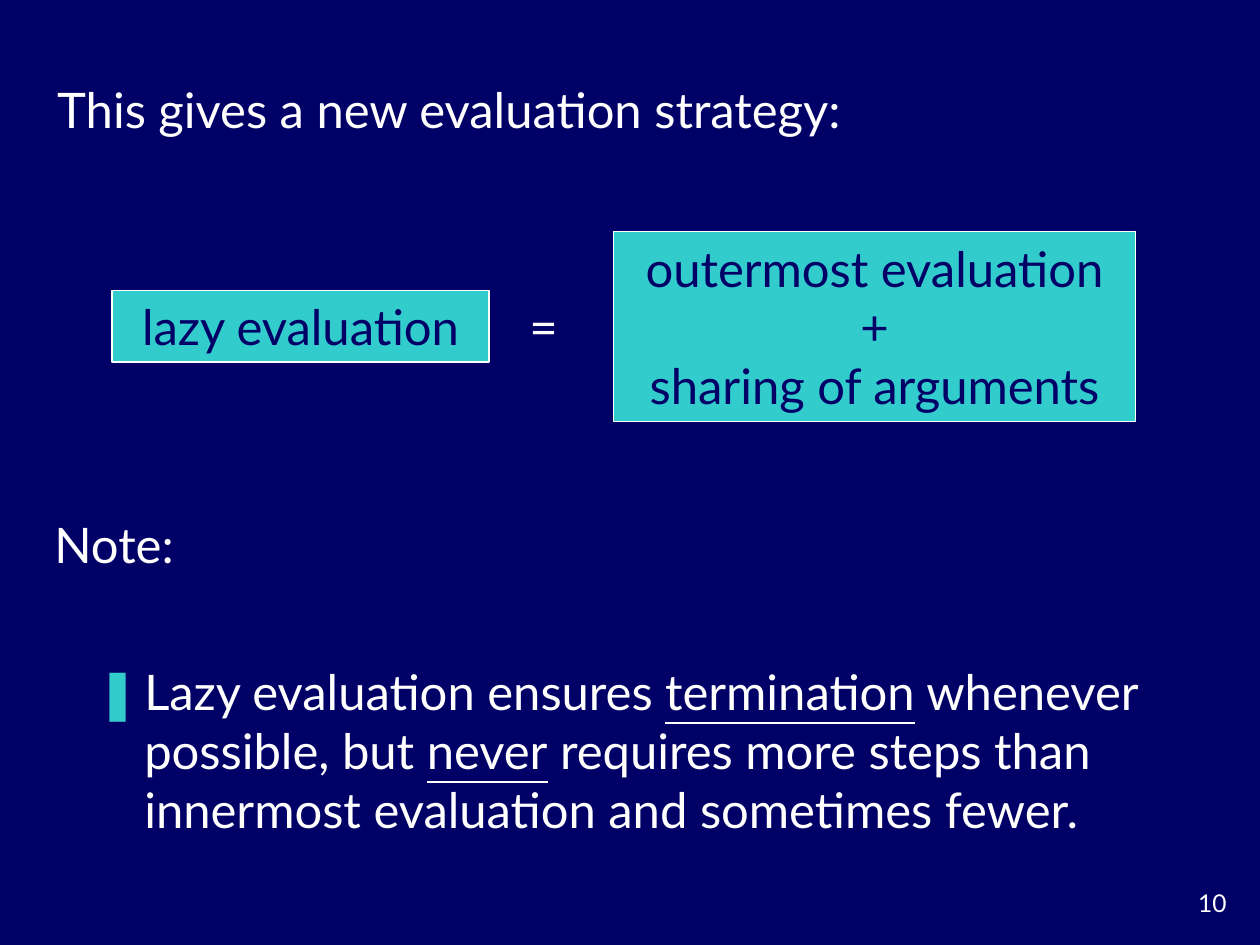
from lxml import etree
from pptx import Presentation
from pptx.dml.color import RGBColor
from pptx.enum.shapes import MSO_SHAPE
from pptx.enum.text import MSO_ANCHOR as Anchor, MSO_AUTO_SIZE as AutoSize, PP_ALIGN as Align
from pptx.oxml.ns import qn
from pptx.util import Pt

NAVY, TEAL, WHITE = "000066", "33CCCC", "FFFFFF"
FONT = "Lato"
LINE_HEIGHT = 41


def color(hex_string):
    return RGBColor.from_string(hex_string)


def place(shape, left, top, width, height):
    shape.left, shape.top = Pt(left), Pt(top)
    shape.width, shape.height = Pt(width), Pt(height)


def write(shape, *paragraphs, size=28, fill=WHITE, align=Align.LEFT, anchor=Anchor.MIDDLE):
    """Each paragraph is a list of (text, underlined) runs or a plain string; "\\n" breaks a line."""
    frame = shape.text_frame
    frame.word_wrap = True
    frame.auto_size = AutoSize.NONE
    frame.vertical_anchor = anchor
    for index, runs in enumerate(paragraphs):
        paragraph = frame.add_paragraph() if index else frame.paragraphs[0]
        paragraph.alignment = align
        paragraph.space_before = Pt(0)
        for text, underlined in [(runs, False)] if isinstance(runs, str) else runs:
            for line_index, line in enumerate(text.split("\n")):
                if line_index:
                    paragraph.add_line_break()
                run = paragraph.add_run()
                run.text = line
                run.font.name, run.font.size = FONT, Pt(size)
                run.font.color.rgb = color(fill)
                if underlined:
                    run.font.underline = True


def add_label(slide, text, left, top, width, height=LINE_HEIGHT, **text_format):
    label = slide.shapes.add_textbox(Pt(left), Pt(top), Pt(width), Pt(height))
    write(label, text, **text_format)


def add_term_box(slide, left, middle, width, height, *paragraphs):
    box = slide.shapes.add_shape(
        MSO_SHAPE.RECTANGLE, Pt(left), Pt(middle - height / 2), Pt(width), Pt(height))
    box.shadow.inherit = False
    box.fill.solid()
    box.fill.fore_color.rgb = color(TEAL)
    box.line.color.rgb = color(WHITE)
    box.line.width = Pt(0.75)
    write(box, *paragraphs, fill=NAVY, align=Align.CENTER)


def add_bullet(paragraph, character, hex_string, indent):
    properties = paragraph._p.get_or_add_pPr()
    properties.set("marL", str(Pt(indent)))
    properties.set("indent", str(-Pt(indent)))
    bullet_color = etree.SubElement(properties, qn("a:buClr"))
    etree.SubElement(bullet_color, qn("a:srgbClr"), val=hex_string)
    etree.SubElement(properties, qn("a:buFont"), typeface=FONT)
    etree.SubElement(properties, qn("a:buChar"), char=character)


def add_equation(slide, left, top, height):
    middle = top + height / 2
    add_term_box(slide, left, middle, 215.5, LINE_HEIGHT, "lazy evaluation")
    add_label(slide, "=", left + 231.5, middle - LINE_HEIGHT / 2, 45)
    add_term_box(slide, left + 286.5, middle, 298.5, height,
                 "outermost evaluation\n+", "sharing of arguments")


def fill_title(slide, left, top, width):
    title = slide.shapes.title
    place(title, left, top, width, LINE_HEIGHT)
    write(title, "This gives a new evaluation strategy:")


def fill_note(slide, left, top, width, height):
    body = slide.placeholders[1]
    place(body, left, top, width, height)
    write(body, [
        ("Lazy evaluation ensures ", False),
        ("termination", True),
        (" whenever possible, but ", False),
        ("never", True),
        (" requires more steps than innermost evaluation and sometimes fewer.", False),
    ], anchor=Anchor.TOP)
    add_bullet(body.text_frame.paragraphs[0], "❚", TEAL, 27)


def main():
    presentation = Presentation()
    presentation.slide_width, presentation.slide_height = Pt(720), Pt(540)
    slide = presentation.slides.add_slide(presentation.slide_layouts[1])
    slide.background.fill.solid()
    slide.background.fill.fore_color.rgb = color(NAVY)

    fill_title(slide, 25.5, 42, 669)
    add_equation(slide, 64, 132.25, 108.5)
    add_label(slide, "Note:", 24, 290.5, 95)
    fill_note(slide, 48.25, 374.5, 624, 127.5)
    add_label(slide, "10", 660, 504, 48, 24, size=14, align=Align.RIGHT, anchor=Anchor.TOP)
    presentation.save("out.pptx")


if __name__ == "__main__":
    main()
